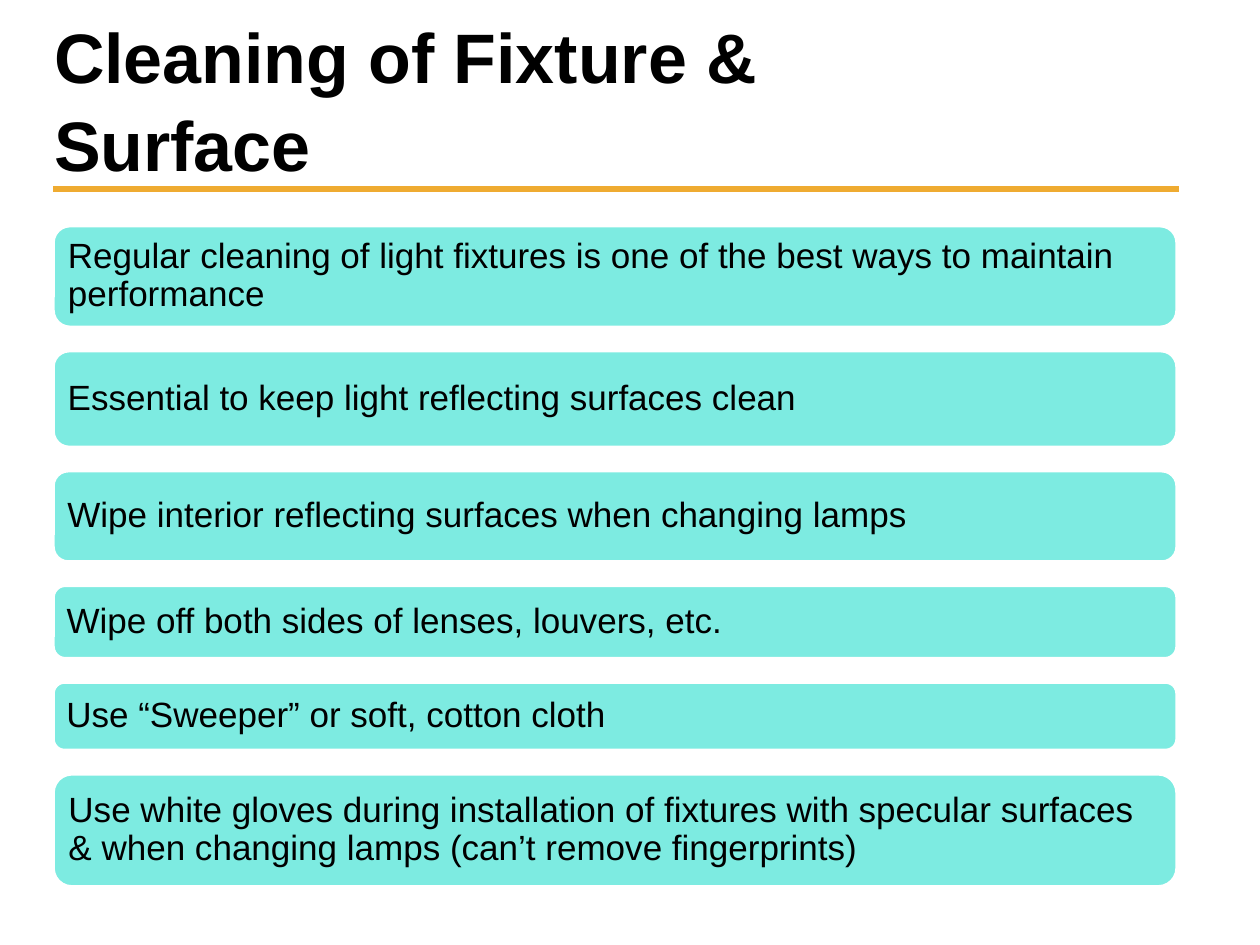
from lxml import etree
from pptx import Presentation
from pptx.dml.color import RGBColor
from pptx.enum import shapes, text
from pptx.oxml.ns import qn
from pptx.util import Cm, Pt


def tint(code):
    return RGBColor.from_string(code)


def style(frame, size, bold, space):
    frame.word_wrap = True
    frame.vertical_anchor = text.MSO_ANCHOR.MIDDLE
    para = frame.paragraphs[0]
    para.alignment = text.PP_ALIGN.LEFT
    para.line_spacing = space
    font = para.runs[0].font
    font.name = "Arial"
    font.size = Pt(size)
    font.bold = bold
    font.color.rgb = tint("000000")


deck = Presentation()
deck.slide_width = Cm(25.4)
deck.slide_height = Cm(19.05)
slide = deck.slides.add_slide(deck.slide_layouts[6])

rule = slide.shapes.add_connector(
    shapes.MSO_CONNECTOR.STRAIGHT, Cm(1.07), Cm(3.81), Cm(23.77), Cm(3.81))
rule.line.color.rgb = tint("EFAB31")
rule.line.width = Pt(4)
etree.SubElement(rule._element.spPr, qn("a:effectLst"))

title = slide.shapes.add_textbox(Cm(0.84), Cm(0.3), Cm(15.82), Cm(3.35))
title.text_frame.text = "Cleaning of Fixture & Surface"
style(title.text_frame, 40, True, 1.04)

tips = [
    (2.05, "Regular cleaning of light fixtures is one of the best ways to maintain performance"),
    (1.95, "Essential to keep light reflecting surfaces clean"),
    (1.84, "Wipe interior reflecting surfaces when changing lamps"),
    (1.48, "Wipe off both sides of lenses, louvers, etc."),
    (1.38, "Use “Sweeper” or soft, cotton cloth"),
    (2.28, "Use white gloves during installation of fixtures with specular surfaces "
           "& when changing lamps (can’t remove fingerprints)"),
]
gap = 0.47
top = 4.55
for height, words in tips:
    bar = slide.shapes.add_shape(
        shapes.MSO_SHAPE.ROUNDED_RECTANGLE, Cm(1.07), Cm(top), Cm(22.66), Cm(height))
    bar.shadow.inherit = False
    bar.fill.solid()
    bar.fill.fore_color.rgb = tint("7DEBE1")
    bar.line.color.rgb = tint("FFFFFF")
    bar.line.width = Pt(2)
    frame = bar.text_frame
    frame.text = words
    frame.margin_left = frame.margin_right = Cm(0.2)
    frame.margin_top = frame.margin_bottom = Cm(0.2)
    style(frame, 20, False, 0.9)
    top += height + gap

deck.save("out.pptx")
